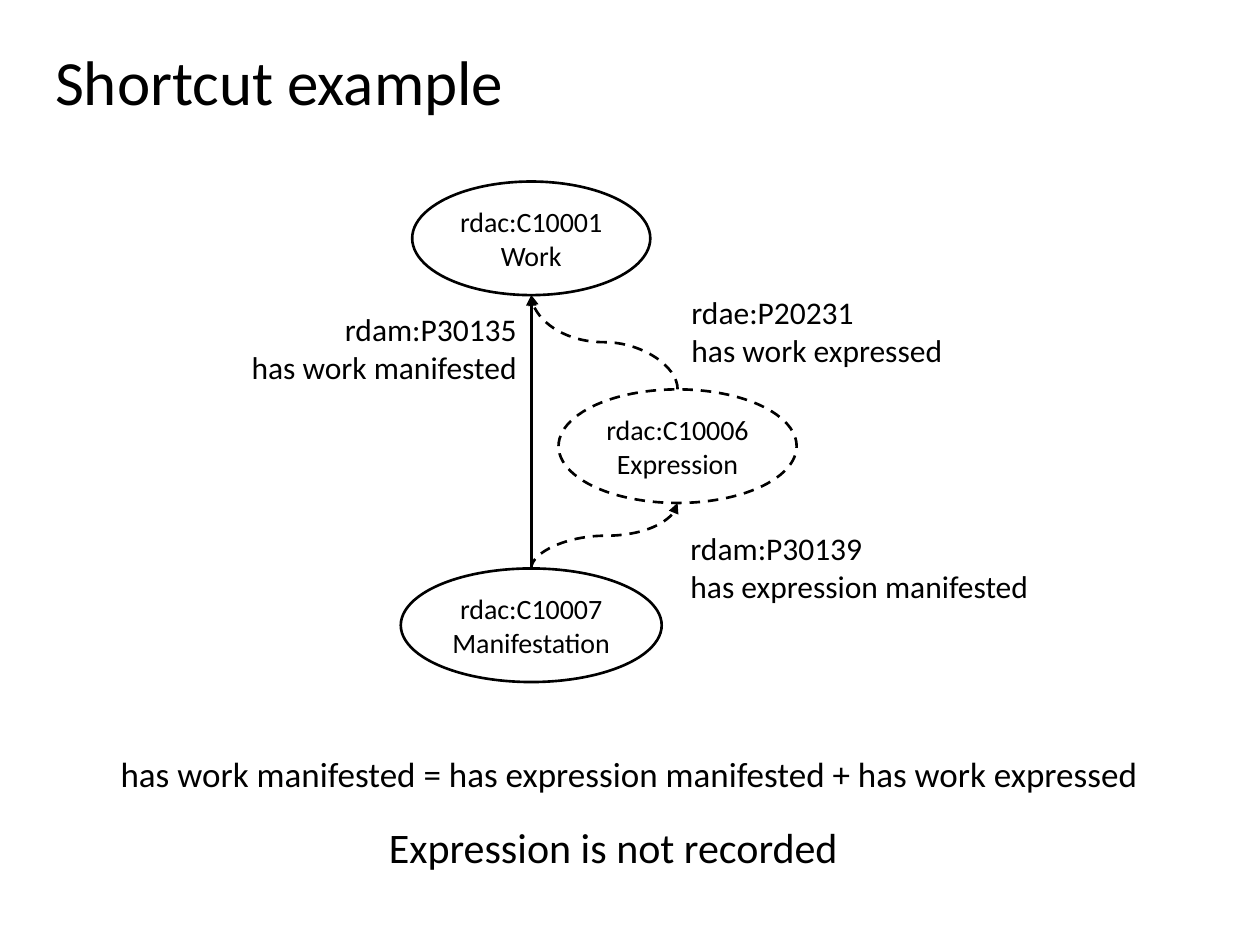
from lxml import etree
from pptx import Presentation
from pptx import util as u
from pptx.dml.color import RGBColor
from pptx.enum import dml, shapes, text
from pptx.oxml.ns import qn

FONT = "Calibri"
BLACK = "000000"
LEFT, CENTER, RIGHT = text.PP_ALIGN.LEFT, text.PP_ALIGN.CENTER, text.PP_ALIGN.RIGHT
NODE_H = 2.29


def color(value):
    return RGBColor.from_string(value)


def write(tf, lines, size, align):
    tf.word_wrap = False
    tf.auto_size = text.MSO_AUTO_SIZE.SHAPE_TO_FIT_TEXT
    tf.text = "\n".join(lines)
    for p in tf.paragraphs:
        p.alignment = align
        for r in p.runs:
            r.font.name, r.font.size = FONT, u.Pt(size)
            r.font.color.rgb = color(BLACK)


def style_line(line, dashed):
    line.color.rgb = color(BLACK)
    line.width = u.Pt(1.5)
    if dashed:
        line.dash_style = dml.MSO_LINE.DASH


def add_label(s, box, lines, size, align=LEFT):
    sp = s.shapes.add_textbox(*map(u.Cm, box))
    write(sp.text_frame, lines, size, align)


def add_node(s, center_x, top, width, lines, dashed=False):
    sp = s.shapes.add_shape(shapes.MSO_SHAPE.OVAL, u.Cm(center_x - width / 2),
                            u.Cm(top), u.Cm(width), u.Cm(NODE_H))
    sp.shadow.inherit = False
    sp.fill.background()
    style_line(sp.line, dashed)
    sp.text_frame.vertical_anchor = text.MSO_ANCHOR.MIDDLE
    write(sp.text_frame, lines, 16, CENTER)


def add_rising_arrow(s, start, end, dashed=False):
    """Curve that leaves and arrives vertically: a level one turned by 270 degrees."""
    (x1, y1), (x2, y2) = start, end
    w, h = y1 - y2, abs(x2 - x1)
    left, top = (x1 + x2 - w) / 2, (y1 + y2 - h) / 2
    cx = s.shapes.add_connector(shapes.MSO_CONNECTOR.CURVE, u.Cm(left), u.Cm(top),
                                u.Cm(left + w), u.Cm(top + h))
    style_line(cx.line, dashed)
    sp_pr = cx._element.spPr
    xfrm = sp_pr.find(qn("a:xfrm"))
    xfrm.set("rot", str(270 * 60000))
    if x2 < x1:
        xfrm.set("flipV", "1")
    etree.SubElement(sp_pr.find(qn("a:ln")), qn("a:tailEnd"), type="triangle")
    etree.SubElement(sp_pr, qn("a:effectLst"))


def add_diagram(s, left, top):
    # Top centre of each node
    axis = left + 5.96
    work = (axis, top)
    expression = (left + 8.91, top + 4.19)
    manifestation = (axis, top + 7.8)

    add_node(s, *manifestation, 5.26, ["rdac:C10007", "Manifestation"])
    add_node(s, *expression, 4.8, ["rdac:C10006", "Expression"], dashed=True)
    add_node(s, *work, 4.8, ["rdac:C10001", "Work"])

    # Relations, from the top of one node to the bottom of another
    for start, end, dashed in [(expression, work, True),
                               (manifestation, work, False),
                               (manifestation, expression, True)]:
        add_rising_arrow(s, start, (end[0], end[1] + NODE_H), dashed)

    # Relation labels
    for x, y, width, lines, align in [
        (0, 2.46, 5.92, ["rdam:P30135", "has work manifested"], RIGHT),
        (8.94, 2.13, 5.61, ["rdae:P20231", "has work expressed"], LEFT),
        (8.92, 6.88, 7.47, ["rdam:P30139", "has expression manifested"], LEFT),
    ]:
        add_label(s, (left + x, top + y, width, 1.8), lines, 18, align)


def add_summary(s, left, top, width):
    add_label(s, (left, top, width, 1.11),
              ["has work manifested = has expression manifested + has work expressed"],
              20, CENTER)
    add_label(s, (left + 5.46, top + 1.4, 9.65, 1.28),
              ["Expression is not recorded"], 24, CENTER)


def main():
    prs = Presentation()
    prs.slide_width, prs.slide_height = u.Cm(25.4), u.Cm(19.05)
    s = prs.slides.add_slide(prs.slide_layouts[6])
    add_diagram(s, 4.75, 3.66)
    add_label(s, (0.86, 0.74, 9.63, 1.8), ["Shortcut example"], 36)
    add_summary(s, 2.08, 15.04, 21.21)
    prs.save("out.pptx")


if __name__ == "__main__":
    main()
